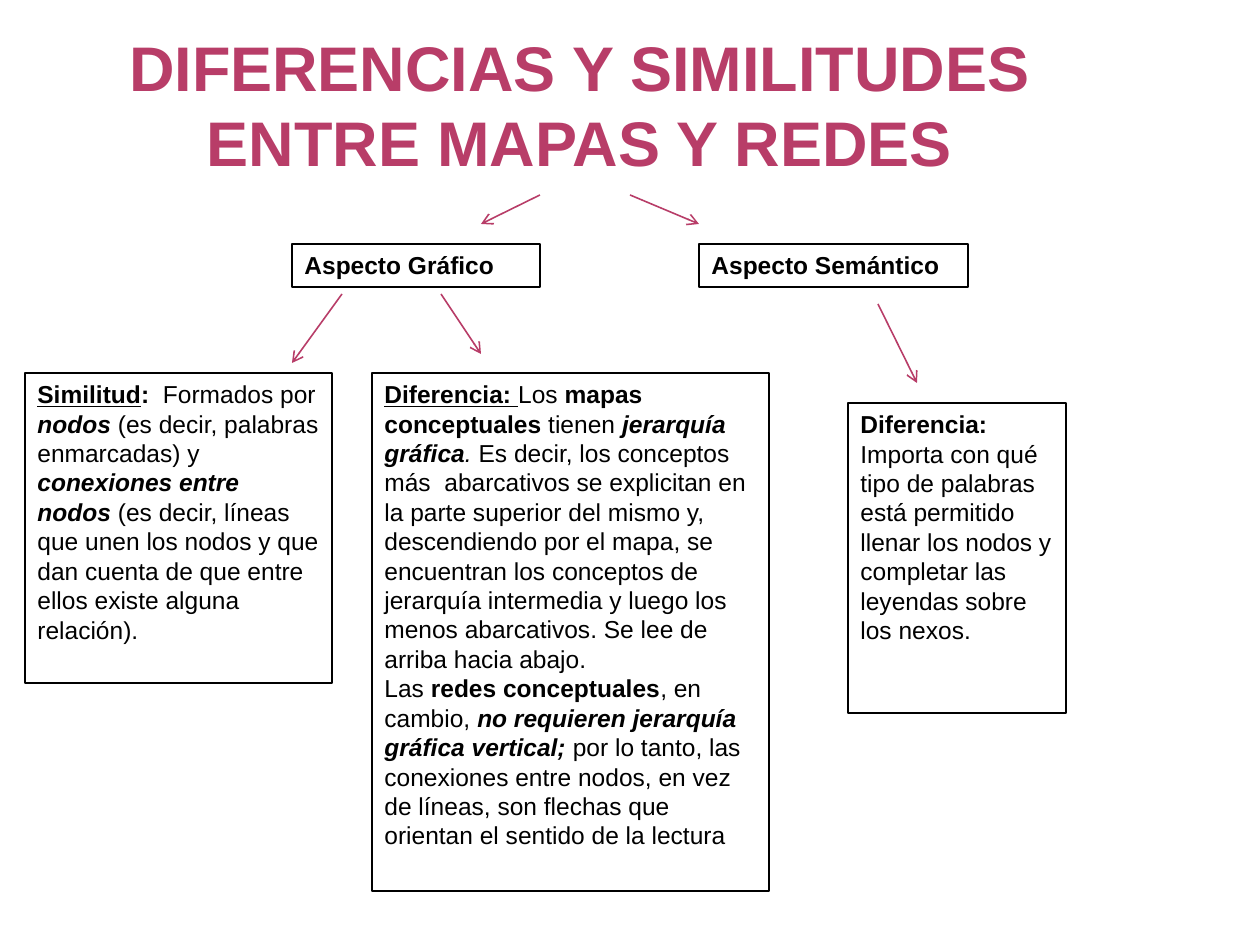
from lxml.etree import SubElement
from pptx import Presentation
from pptx.dml.color import RGBColor
from pptx.enum.shapes import MSO_CONNECTOR
from pptx.enum.text import MSO_ANCHOR, MSO_AUTO_SIZE, PP_ALIGN
from pptx.oxml.ns import qn
from pptx.util import Inches, Pt

BLACK = RGBColor(0x00, 0x00, 0x00)
WHITE = RGBColor(0xFF, 0xFF, 0xFF)
PINK = RGBColor(0xB8, 0x3D, 0x68)
FONT = "Arial"

HEADS = [
    ((292, 244, 248, 43), "Aspecto Gráfico"),
    ((699, 244, 269, 43), "Aspecto Semántico"),
]
NOTES = [
    ((25, 373, 307, 310), [[
        ("Similitud", "bu"), (":  ", "b"), ("Formados por ", ""),
        ("nodos ", "bi"), ("(es decir, palabras enmarcadas) y ", ""),
        ("conexiones entre", "bi"), ("\n", ""), ("nodos ", "bi"),
        ("(es decir, líneas que unen los nodos y que dan cuenta de que "
         "entre ellos existe alguna relación).", ""),
    ]]),
    ((372, 373, 397, 518), [[
        ("Diferencia: ", "bu"), ("Los ", ""), ("mapas conceptuales", "b"),
        (" tienen ", ""), ("jerarquía gráfica", "bi"), (". ", "i"),
        ("Es decir, los conceptos más  abarcativos se explicitan en la "
         "parte superior del mismo y, descendiendo por el mapa, se "
         "encuentran los conceptos de jerarquía intermedia y luego los "
         "menos abarcativos. Se lee de arriba hacia abajo.", ""),
    ], [
        ("Las ", ""), ("redes conceptuales", "b"), (", en cambio, ", ""),
        ("no requieren jerarquía gráfica vertical; ", "bi"),
        ("por lo tanto, las conexiones entre nodos, en vez de líneas, "
         "son flechas que orientan el sentido de la lectura", ""),
    ]]),
    ((848, 403, 218, 310), [[
        ("Diferencia: ", "b"),
        ("Importa con qué tipo de palabras está permitido llenar los "
         "nodos y completar las leyendas sobre los nexos.", ""),
    ]]),
]
ARROWS = [
    (540, 195, 481, 224),
    (630, 195, 699, 224),
    (342, 294, 292, 363),
    (441, 294, 481, 354),
    (878, 304, 917, 383),
]


def px(*vals):
    return [round(val * Inches(1) / 126) for val in vals]


def add_title(slide, text):
    title = slide.shapes.title
    title.left, title.top, title.width, title.height = px(44, 26, 1071, 166)
    title.fill.solid()
    title.fill.fore_color.rgb = WHITE
    title.line.color.rgb = WHITE
    title.line.width = Pt(3.15)
    frame = title.text_frame
    frame.text = text
    frame.word_wrap = True
    frame.auto_size = MSO_AUTO_SIZE.NONE
    frame.vertical_anchor = MSO_ANCHOR.BOTTOM
    frame.margin_left = frame.margin_right = Inches(0.1)
    frame.margin_top = frame.margin_bottom = Inches(0.1)
    para = frame.paragraphs[0]
    para.alignment = PP_ALIGN.CENTER
    para.line_spacing = 1.0
    font = para.font
    font.name, font.size, font.bold = FONT, Pt(36), True
    font.color.rgb = PINK


def add_runs(para, runs):
    for text, style in runs:
        if text == "\n":
            para.add_line_break()
            continue
        run = para.add_run()
        run.text = text
        run.font.bold = "b" in style
        run.font.italic = "i" in style
        run.font.underline = "u" in style
    para.font.name, para.font.size = FONT, Pt(14)
    para.font.color.rgb = BLACK


def add_box(slide, area, paras):
    box = slide.shapes.add_textbox(*px(*area))
    box.line.color.rgb = BLACK
    box.line.width = Pt(0.75)
    frame = box.text_frame
    frame.word_wrap = True
    for num, runs in enumerate(paras):
        para = frame.add_paragraph() if num else frame.paragraphs[0]
        add_runs(para, runs)


def add_arrow(slide, ends):
    arrow = slide.shapes.add_connector(MSO_CONNECTOR.STRAIGHT, *px(*ends))
    arrow.line.color.rgb = PINK
    arrow.line.width = Pt(0.9)
    SubElement(arrow.line._get_or_add_ln(), qn("a:tailEnd"), type="arrow")
    SubElement(arrow._element.spPr, qn("a:effectLst"))


def main():
    deck = Presentation()
    deck.slide_width, deck.slide_height = px(1260, 945)
    slide = deck.slides.add_slide(deck.slide_layouts[5])
    add_title(slide, "DIFERENCIAS Y SIMILITUDES ENTRE MAPAS Y REDES")
    for area, text in HEADS:
        add_box(slide, area, [[(text, "b")]])
    for area, paras in NOTES:
        add_box(slide, area, paras)
    for ends in ARROWS:
        add_arrow(slide, ends)
    deck.save("out.pptx")


if __name__ == "__main__":
    main()
